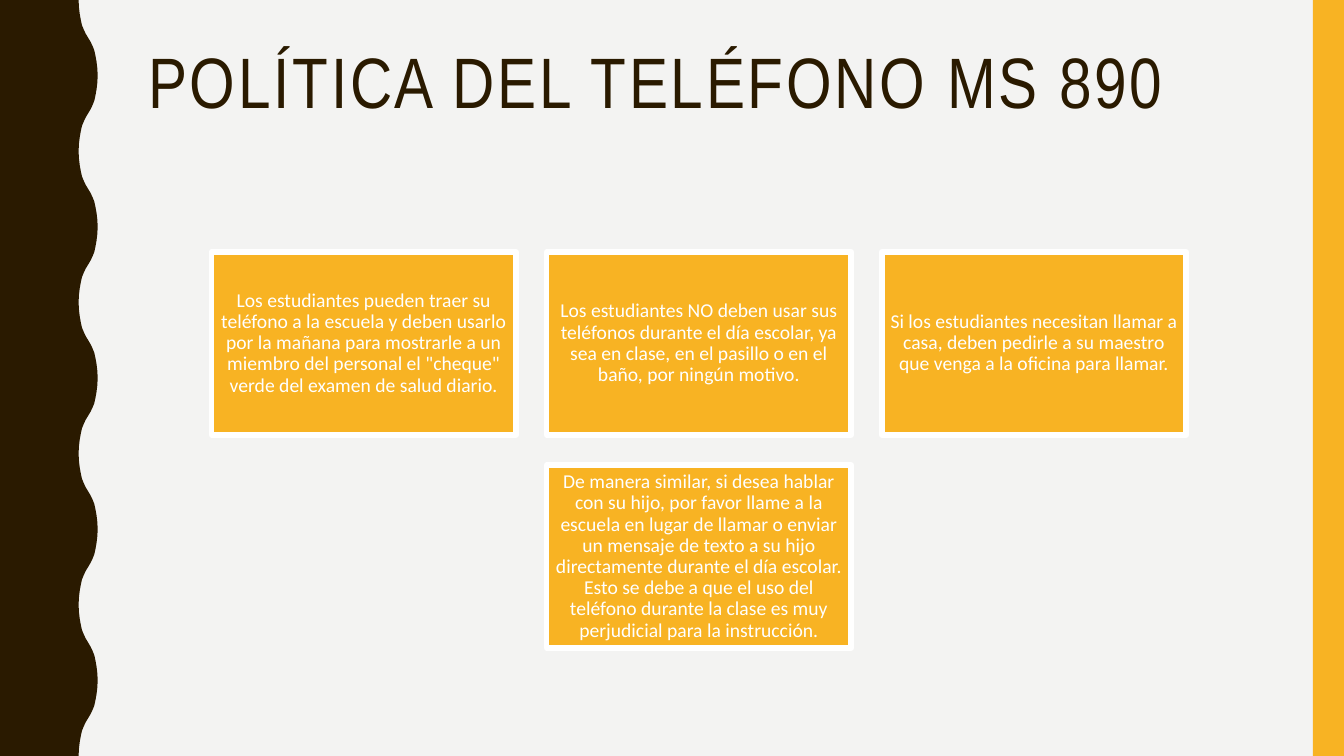
from dataclasses import dataclass

from pptx import Presentation
from pptx.dml.color import RGBColor
from pptx.enum.shapes import MSO_SHAPE
from pptx.enum.text import MSO_ANCHOR, MSO_AUTO_SIZE, PP_ALIGN
from pptx.util import Pt

TITLE = "POLÍTICA DEL TELÉFONO MS 890"
RULES = [
    "Los estudiantes pueden traer su teléfono a la escuela y deben usarlo por la mañana para mostrarle a un miembro del personal el \"cheque\" verde del examen de salud diario.",
    "Los estudiantes NO deben usar sus teléfonos durante el día escolar, ya sea en clase, en el pasillo o en el baño, por ningún motivo.",
    "Si los estudiantes necesitan llamar a casa, deben pedirle a su maestro que venga a la oficina para llamar.",
    "De manera similar, si desea hablar con su hijo, por favor llame a la escuela en lugar de llamar o enviar un mensaje de texto a su hijo directamente durante el día escolar. Esto se debe a que el uso del teléfono durante la clase es muy perjudicial para la instrucción.",
]


@dataclass(frozen=True)
class Theme:
    paper: RGBColor = RGBColor.from_string("F3F3F2")
    dark: RGBColor = RGBColor.from_string("2A1A00")
    gold: RGBColor = RGBColor.from_string("F8B323")
    white: RGBColor = RGBColor.from_string("FFFFFF")
    title_font: str = "Arial Narrow"
    body_font: str = "Calibri"
    title_size: int = 51
    body_size: int = 14
    border: int = 4


T = Theme()
W, H = 960, 540
WAVES = 5
PERIOD = H / WAVES
WAVE_MID = 63
QUARTER = [(56.2, 0), (56.4, 5), (57, 10), (57.8, 14.4), (58.6, 18),
           (59.8, 21), (61.2, 24), (WAVE_MID, 27)]
STRIPE_W = 22.3
COLS = 3
CARD_W = 217.6
CARD_H = CARD_W * 0.6
GAP = CARD_W / 10
GRID_LEFT, GRID_TOP = 151.1, 180
INSET = 4.2


def paint(shape, color):
    shape.shadow.inherit = False
    shape.fill.solid()
    shape.fill.fore_color.rgb = color
    shape.line.fill.background()


def style(p, font, size, color, align):
    p.alignment = align
    p.line_spacing = 0.9
    for r in p.runs:
        r.font.name = font
        r.font.size = Pt(size)
        r.font.color.rgb = color


def add_wave(s):
    rise = QUARTER + [(2 * WAVE_MID - x, PERIOD / 2 - y) for x, y in QUARTER[-2::-1]]
    wave = rise + [(x, PERIOD - y) for x, y in rise[-2::-1]]
    edge = [(x, y + i * PERIOD) for i in range(WAVES) for x, y in wave]
    points = [(Pt(x), Pt(y)) for x, y in edge + [(0, H)]]
    fb = s.shapes.build_freeform(0, 0)
    fb.add_line_segments(points, close=True)
    paint(fb.convert_to_shape(), T.dark)


def add_stripe(s):
    stripe = s.shapes.add_shape(MSO_SHAPE.RECTANGLE, Pt(W - STRIPE_W), 0, Pt(STRIPE_W), Pt(H))
    paint(stripe, T.gold)


def set_title(s):
    title = s.shapes.title
    title.left, title.top, title.width, title.height = Pt(98.6), Pt(30.2), Pt(801.4), Pt(117.4)
    tf = title.text_frame
    tf.text = TITLE
    tf.auto_size = MSO_AUTO_SIZE.NONE
    tf.vertical_anchor = MSO_ANCHOR.TOP
    p = tf.paragraphs[0]
    style(p, T.title_font, T.title_size, T.dark, PP_ALIGN.LEFT)
    p.runs[0].font._element.set("spc", "200")


def add_card(s, text, x, y):
    card = s.shapes.add_shape(MSO_SHAPE.RECTANGLE, Pt(x), Pt(y), Pt(CARD_W), Pt(CARD_H))
    paint(card, T.gold)
    card.line.color.rgb = T.white
    card.line.width = Pt(T.border)
    tf = card.text_frame
    tf.text = text
    tf.word_wrap = True
    tf.vertical_anchor = MSO_ANCHOR.MIDDLE
    tf.margin_left = tf.margin_right = tf.margin_top = tf.margin_bottom = Pt(INSET)
    style(tf.paragraphs[0], T.body_font, T.body_size, T.white, PP_ALIGN.CENTER)


def add_cards(s):
    for start in range(0, len(RULES), COLS):
        row = RULES[start:start + COLS]
        left = GRID_LEFT + (COLS - len(row)) * (CARD_W + GAP) / 2
        top = GRID_TOP + start // COLS * (CARD_H + GAP)
        for i, text in enumerate(row):
            add_card(s, text, left + i * (CARD_W + GAP), top)


def main():
    prs = Presentation()
    prs.slide_width, prs.slide_height = Pt(W), Pt(H)
    s = prs.slides.add_slide(prs.slide_layouts[5])
    s.background.fill.solid()
    s.background.fill.fore_color.rgb = T.paper
    add_wave(s)
    add_stripe(s)
    set_title(s)
    add_cards(s)
    prs.save("out.pptx")


if __name__ == "__main__":
    main()
